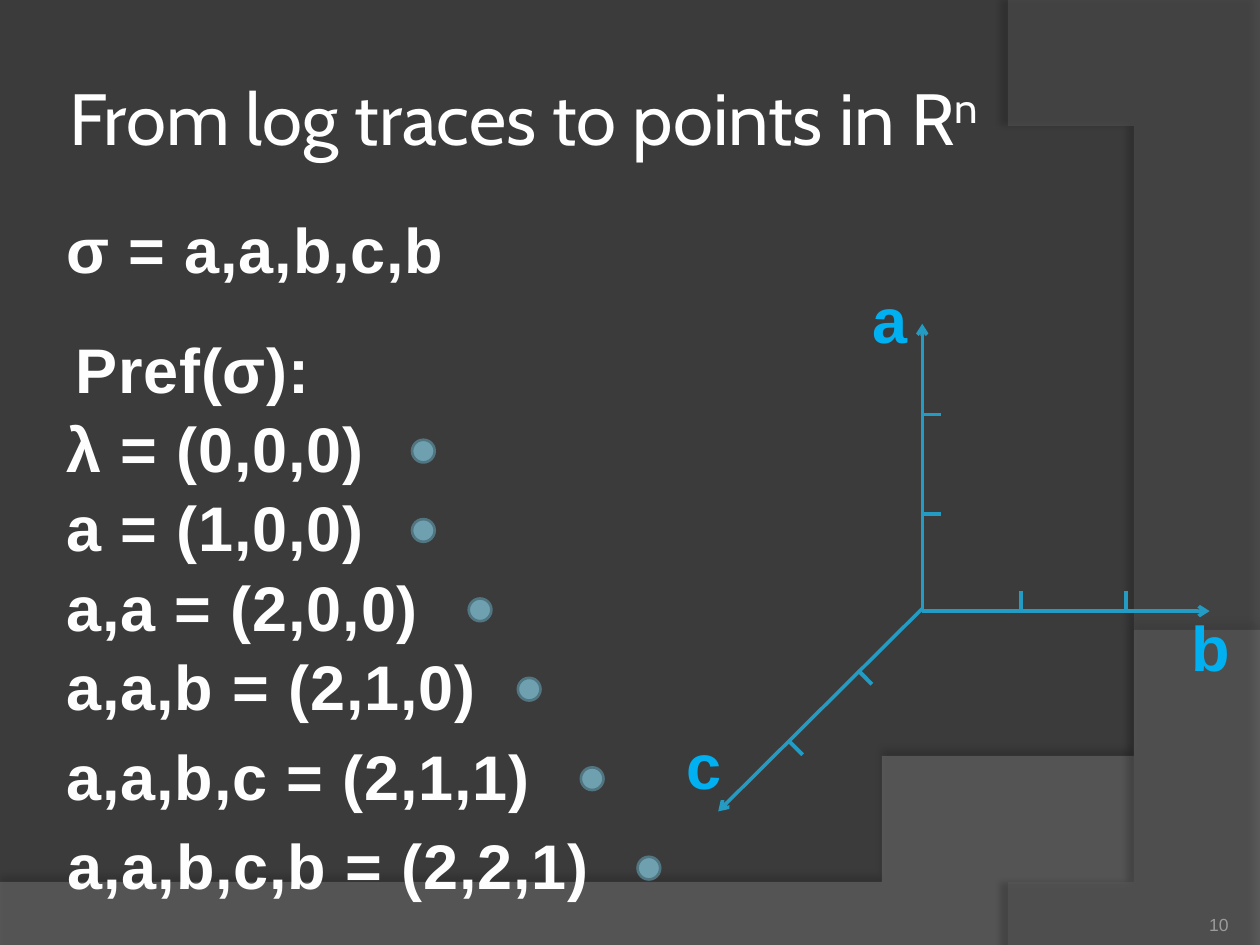
from lxml.etree import SubElement
from pptx import Presentation
from pptx.dml.color import RGBColor
from pptx.enum.shapes import MSO_CONNECTOR, MSO_SHAPE
from pptx.enum.text import MSO_ANCHOR, MSO_AUTO_SIZE, PP_ALIGN
from pptx.oxml.ns import qn
from pptx.util import Inches, Pt

BACKGROUND = RGBColor(0x3B, 0x3B, 0x3B)
LOWER_WAVE = RGBColor(0x7F, 0x7F, 0x7F)
RIGHT_WAVE = RGBColor(0x5E, 0x5E, 0x5E)
WHITE = RGBColor(0xFF, 0xFF, 0xFF)
TRACE_TEXT = RGBColor(0xFE, 0xFE, 0xFE)
AXIS_TEXT = RGBColor(0x00, 0xB0, 0xF0)
AXIS_LINE = RGBColor(0x23, 0x9B, 0xC2)
DOT_FILL = RGBColor(0x6E, 0xA0, 0xB0)
DOT_LINE = RGBColor(0x51, 0x76, 0x82)
PAGE_NUMBER = RGBColor(0x9D, 0x9B, 0x9A)
OUTLINE = "717881"

TITLE_FORMAT = {"name": "Cabin", "size": Pt(41.4)}
LABEL_FORMAT = {"name": "Arial", "size": Pt(36), "bold": True}
NUMBER_FORMAT = {"name": "Arial", "size": Pt(10)}

HEADINGS = [("σ = a,a,b,c,b", 0.43, 1.62, 3.23), ("Pref(σ):", 0.5, 2.57, 2.24)]
PREFIXES = [
    ("λ = (0,0,0)", 0.43, 3.2, 2.74, 3.27),
    ("a = (1,0,0)", 0.43, 3.83, 2.74, 3.27),
    ("a,a = (2,0,0)", 0.43, 4.46, 3.18, 3.72),
    ("a,a,b = (2,1,0)", 0.43, 5.09, 3.64, 4.11),
    ("a,a,b,c = (2,1,1)", 0.43, 5.8, 4.07, 4.61),
    ("a,a,b,c,b = (2,2,1)", 0.44, 6.51, 4.54, 5.06),
]
AXES = [
    {"label": ("a", 6.83, 2.18, 0.49), "start": (7.32, 4.85), "tip": (7.32, 2.57),
     "ticks": [(7.32, 4.08), (7.32, 3.29)], "tick_step": (0.15, 0)},
    {"label": ("b", 9.36, 4.78, 0.52), "start": (7.32, 4.85), "tip": (9.6, 4.85),
     "ticks": [(8.1, 4.85), (8.94, 4.85)], "tick_step": (0, -0.16)},
    {"label": ("c", 5.35, 5.72, 0.49), "start": (7.32, 4.83), "tip": (5.7, 6.44),
     "ticks": [(6.81, 5.32), (6.26, 5.88)], "tick_step": (0.11, 0.11)},
]
WAVES = [
    {"color": LOWER_WAVE, "opacity": 45, "shadow": (35, 4, 3.5, 270),
     "corners": [(0, 7.05), (0, 7.5), (10, 7.5)],
     "curve": [(10, 5.2), (5.59, 7.29), (3.91, 7.19), (0, 7.05)]},
    {"color": RIGHT_WAVE, "opacity": 40, "shadow": (45, 4, 4, 180),
     "corners": [(10, 0.02), (10, 7.5)],
     "curve": [(8.21, 7.5), (9.35, 6.19), (10.18, 3), (8, 0)]},
]
LABEL_HEIGHT = 0.71
DOT_SIZE = 0.18
CURVE_STEPS = 60


def curve_points(controls):
    for step in range(CURVE_STEPS + 1):
        t = step / CURVE_STEPS
        weights = ((1 - t) ** 3, 3 * t * (1 - t) ** 2, 3 * t * t * (1 - t), t ** 3)
        yield tuple(sum(w * point[axis] for w, point in zip(weights, controls))
                    for axis in (0, 1))


def add_wave(page, wave):
    points = wave["corners"] + list(curve_points(wave["curve"]))
    builder = page.shapes.build_freeform(*points[0], scale=Inches(1))
    builder.add_line_segments(points[1:], close=True)
    shape = builder.convert_to_shape()
    shape.fill.solid()
    shape.fill.fore_color.rgb = wave["color"]
    shape.line.fill.background()
    shape.shadow.inherit = False
    properties = shape._element.spPr
    color = properties.find(qn("a:solidFill"))[0]
    SubElement(color, qn("a:alpha"), val=str(wave["opacity"] * 1000))
    opacity, blur, distance, angle = wave["shadow"]
    shadow = SubElement(properties.find(qn("a:effectLst")), qn("a:outerShdw"),
                        blurRad=str(Pt(blur)), dist=str(Pt(distance)),
                        dir=str(angle * 60000), algn="ctr", rotWithShape="0")
    shade = SubElement(shadow, qn("a:srgbClr"), val="000000")
    SubElement(shade, qn("a:alpha"), val=str(opacity * 1000))


def add_box(page, left, top, width, height, wrap=True, anchor=MSO_ANCHOR.TOP, margin=None):
    box = page.shapes.add_textbox(*map(Inches, (left, top, width, height)))
    frame = box.text_frame
    frame.word_wrap = wrap
    frame.vertical_anchor = anchor
    if margin is not None:
        for side in ("left", "top", "right", "bottom"):
            setattr(frame, f"margin_{side}", Inches(margin))
    return frame


def add_span(para, text, style, color):
    span = para.add_run()
    span.text = text
    for name, value in style.items():
        setattr(span.font, name, value)
    span.font.color.rgb = color
    return span._r.get_or_add_rPr()


def add_label(page, text, left, top, width, color):
    frame = add_box(page, left, top, width, LABEL_HEIGHT, wrap=False)
    frame.auto_size = MSO_AUTO_SIZE.SHAPE_TO_FIT_TEXT
    properties = add_span(frame.paragraphs[0], text, LABEL_FORMAT, color)
    properties.set("spc", "50")
    outline = SubElement(properties, qn("a:ln"), w=str(Pt(1)))
    SubElement(SubElement(outline, qn("a:solidFill")), qn("a:srgbClr"), val=OUTLINE)
    properties.insert(0, outline)


def add_line(page, start, end, width, arrow=False):
    line = page.shapes.add_connector(MSO_CONNECTOR.STRAIGHT, *map(Inches, (*start, *end)))
    line.line.color.rgb = AXIS_LINE
    line.line.width = Pt(width)
    if arrow:
        SubElement(line.line._get_or_add_ln(), qn("a:tailEnd"), type="arrow")
    SubElement(line._element.spPr, qn("a:effectLst"))


def add_dot(page, left, top):
    dot = page.shapes.add_shape(MSO_SHAPE.OVAL, *map(Inches, (left, top, DOT_SIZE, DOT_SIZE)))
    dot.shadow.inherit = False
    dot.fill.solid()
    dot.fill.fore_color.rgb = DOT_FILL
    dot.line.color.rgb = DOT_LINE
    dot.line.width = Pt(1.5)


def main():
    deck = Presentation()
    deck.slide_width, deck.slide_height = Inches(10), Inches(7.5)
    page = deck.slides.add_slide(deck.slide_layouts[6])
    page.background.fill.solid()
    page.background.fill.fore_color.rgb = BACKGROUND

    for wave in WAVES:
        add_wave(page, wave)

    title = add_box(page, 0.5, 0.3, 8.17, 1.25, anchor=MSO_ANCHOR.MIDDLE, margin=0.05)
    add_span(title.paragraphs[0], "From log traces to points in R", TITLE_FORMAT, WHITE)
    add_span(title.paragraphs[0], "n", TITLE_FORMAT, WHITE).set("baseline", "30000")

    for heading in HEADINGS:
        add_label(page, *heading, TRACE_TEXT)
    for text, left, top, width, dot_left in PREFIXES:
        add_label(page, text, left, top, width, TRACE_TEXT)
        add_dot(page, dot_left, top + 0.29)

    for axis in AXES:
        add_line(page, axis["start"], axis["tip"], 2, arrow=True)
        for x, y in axis["ticks"]:
            step_x, step_y = axis["tick_step"]
            add_line(page, (x, y), (x + step_x, y + step_y), 2.25)
        add_label(page, *axis["label"], AXIS_TEXT)

    number = add_box(page, 8.92, 7.02, 0.83, 0.4, anchor=MSO_ANCHOR.BOTTOM, margin=0)
    number.paragraphs[0].alignment = PP_ALIGN.RIGHT
    add_span(number.paragraphs[0], "10", NUMBER_FORMAT, PAGE_NUMBER)
    deck.save("out.pptx")


if __name__ == "__main__":
    main()
